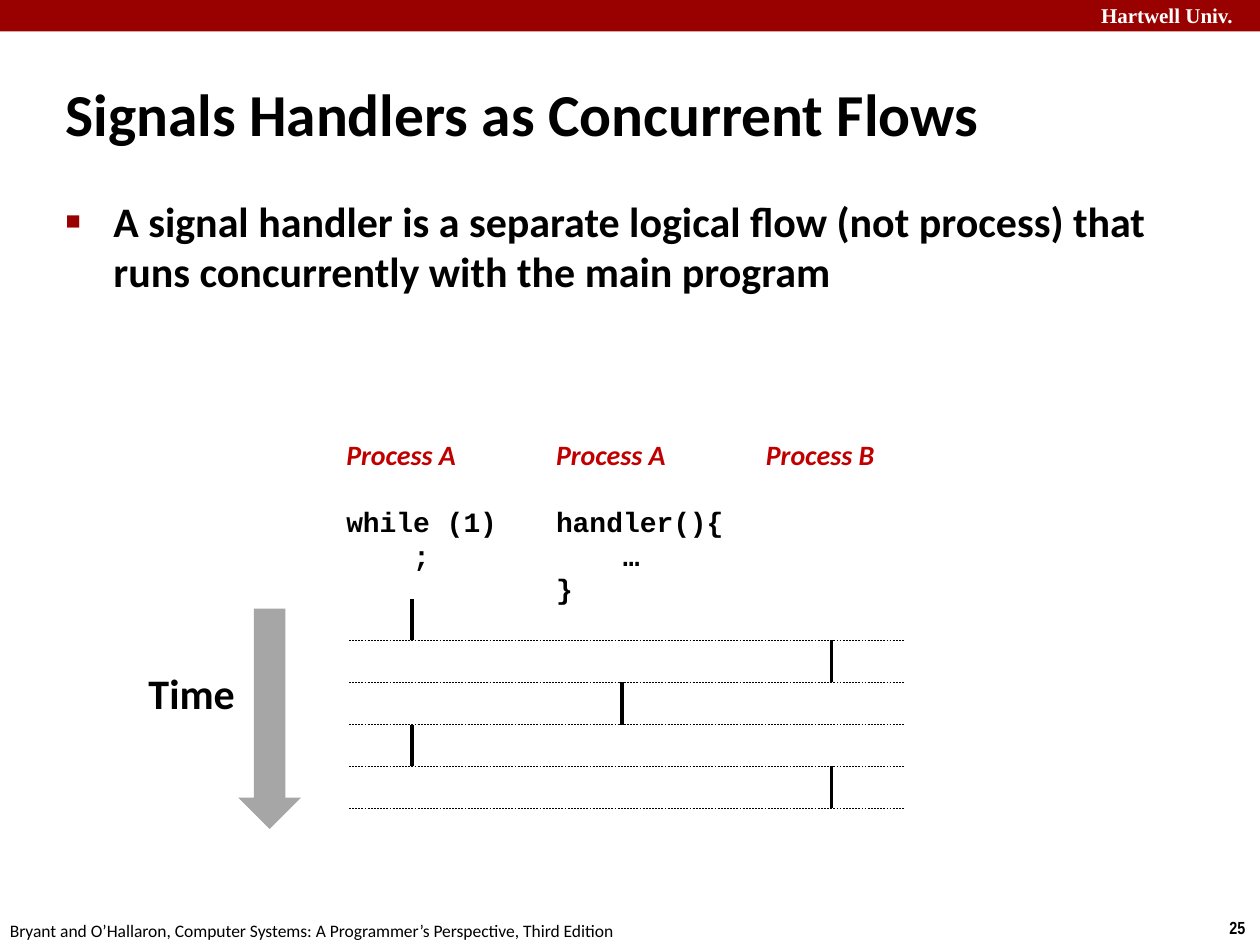
from pptx import Presentation
from pptx.dml.color import RGBColor
from pptx.enum.dml import MSO_LINE
from pptx.enum.shapes import MSO_CONNECTOR, MSO_SHAPE
from pptx.enum.text import MSO_ANCHOR, MSO_AUTO_SIZE, PP_ALIGN
from pptx.oxml.ns import qn
from pptx.util import Inches, Pt

BLACK = RGBColor(0x00, 0x00, 0x00)
WHITE = RGBColor(0xFF, 0xFF, 0xFF)
CRIMSON = RGBColor(0x99, 0x00, 0x00)
RED = RGBColor(0xC0, 0x00, 0x00)
GRAY = RGBColor(0xA6, 0xA6, 0xA6)

TITLE = "Signals Handlers as Concurrent Flows"
POINT = ("A signal handler is a separate logical flow (not process) that "
         "runs concurrently with the main program")
LABELS = [
    ("Hartwell Univ.", (8.64, -0.03, 1.43, 0.3), 12, "Times New Roman", WHITE, True),
    ("25", (9.66, 7.23, 0.34, 0.27), 10, "Arial Narrow", BLACK, True),
    ("Bryant and O’Hallaron, Computer Systems: A Programmer’s Perspective, Third Edition",
     (-0.02, 7.25, 5.08, 0.27), 10, "Calibri", BLACK, False),
    ("Time", (1.08, 5.25, 0.89, 0.5), 24, "Calibri", BLACK, True),
]
FLOWS = [
    ("Process A", 1.4, 1.17, [("while (1)", 0), (";", 1)]),
    ("Process A", 1.54, 1.44, [("handler(){", 0), ("…", 1), ("}", 0)]),
    ("Process B", 1.08, 0.37, []),
]
RUNNING = [0, 2, 1, 0, 2]

FLOW_LEFT, FLOW_TOP, FLOW_STEP = 2.65, 3.42, 1.665
LANE_OFFSET = 0.62
TIME_TOP, TIME_STEP = 4.75, 1 / 3
GUIDE_LEFT, GUIDE_RIGHT = 2.77, 7.18
CODE_GAP = Pt(19.5)
CODE_INDENT = Inches(0.53)


def add_run(paragraph, text, size, font, color, bold=True, italic=False):
    run = paragraph.add_run()
    run.text = text
    run.font.size = Pt(size)
    run.font.name = font
    run.font.color.rgb = color
    run.font.bold = bold
    run.font.italic = italic


def add_box(slide, at):
    frame = slide.shapes.add_textbox(*map(Inches, at)).text_frame
    frame.word_wrap = False
    return frame


def add_block(slide, preset, at, color):
    block = slide.shapes.add_shape(preset, *map(Inches, at))
    block.shadow.inherit = False
    block.fill.solid()
    block.fill.fore_color.rgb = color
    block.line.fill.background()


def add_line(slide, start, end, width, dash=None):
    line = slide.shapes.add_connector(MSO_CONNECTOR.STRAIGHT, *map(Inches, start + end))
    line.line.color.rgb = BLACK
    line.line.width = Pt(width)
    line.line.dash_style = dash
    properties = line._element.spPr
    properties.append(properties.makeelement(qn("a:effectLst"), {}))


def indent(paragraph, left, hanging=0):
    properties = paragraph._p.get_or_add_pPr()
    properties.set("marL", str(left))
    properties.set("indent", str(-hanging))
    return properties


def place(placeholder, at, anchor):
    placeholder.left, placeholder.top, placeholder.width, placeholder.height = map(Inches, at)
    frame = placeholder.text_frame
    frame.auto_size = MSO_AUTO_SIZE.NONE
    frame.vertical_anchor = anchor
    paragraph = frame.paragraphs[0]
    paragraph.alignment = PP_ALIGN.LEFT
    return paragraph


def add_bullet(paragraph):
    properties = indent(paragraph, Inches(0.38), Inches(0.38))
    color = properties.makeelement(qn("a:buClr"), {})
    color.append(color.makeelement(qn("a:srgbClr"), {"val": str(CRIMSON)}))
    properties.append(color)
    properties.append(properties.makeelement(qn("a:buSzPct"), {"val": "60000"}))
    properties.append(properties.makeelement(qn("a:buChar"), {"char": "■"}))


def add_flow(slide, column, name, width, height, code):
    frame = add_box(slide, (FLOW_LEFT + column * FLOW_STEP, FLOW_TOP, width, height))
    add_run(frame.paragraphs[0], name, 16, "Calibri", RED, italic=True)
    for row, (text, level) in enumerate(code):
        paragraph = frame.add_paragraph()
        indent(paragraph, level * CODE_INDENT)
        paragraph.space_before = Pt(0) if row else CODE_GAP
        add_run(paragraph, text, 16, "Courier New", BLACK)


def main():
    """Build the slide on signal handlers as concurrent flows."""
    deck = Presentation()
    deck.slide_width, deck.slide_height = Inches(10), Inches(7.5)
    slide = deck.slides.add_slide(deck.slide_layouts[1])

    add_block(slide, MSO_SHAPE.RECTANGLE, (0, 0, 10, 0.25), CRIMSON)
    heading = place(slide.shapes.title, (0.42, 0.48, 8.3, 0.83), MSO_ANCHOR.MIDDLE)
    add_run(heading, TITLE, 34, "Calibri", BLACK)
    point = place(slide.placeholders[1], (0.42, 1.5, 9.09, 1.42), MSO_ANCHOR.TOP)
    point.space_before = Pt(4.8)
    add_bullet(point)
    add_run(point, POINT, 24, "Calibri", BLACK)

    for text, at, size, font, color, bold in LABELS:
        add_run(add_box(slide, at).paragraphs[0], text, size, font, color, bold)
    for column, flow in enumerate(FLOWS):
        add_flow(slide, column, *flow)

    for step, column in enumerate(RUNNING):
        lane = FLOW_LEFT + column * FLOW_STEP + LANE_OFFSET
        top = TIME_TOP + step * TIME_STEP
        bottom = top + TIME_STEP
        add_line(slide, (lane, top), (lane, bottom), 2)
        add_line(slide, (GUIDE_LEFT, bottom), (GUIDE_RIGHT, bottom), 0.25, MSO_LINE.DASH)
    add_block(slide, MSO_SHAPE.DOWN_ARROW, (1.89, 4.83, 0.5, 1.75), GRAY)

    deck.save("out.pptx")


if __name__ == "__main__":
    main()
